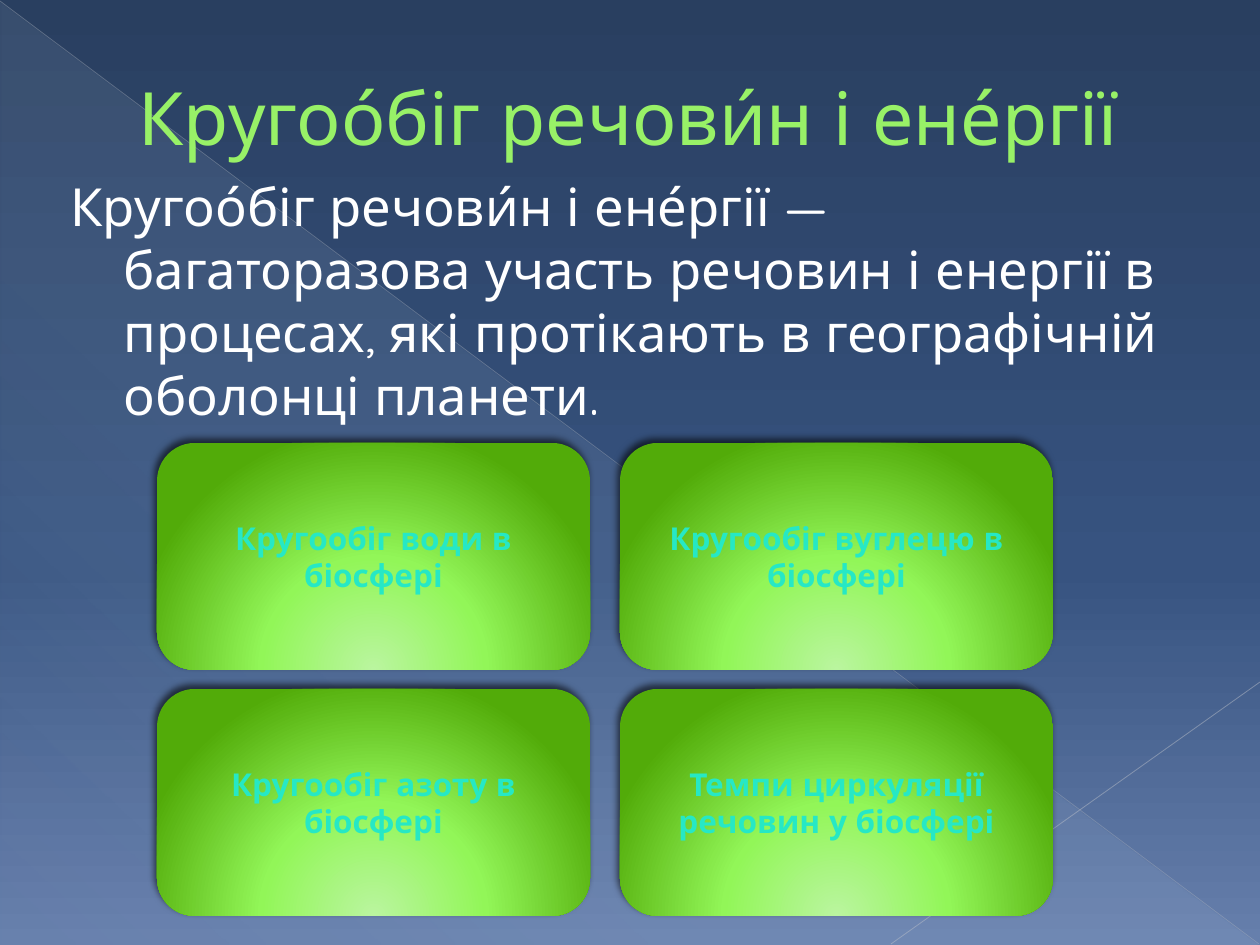
from lxml import etree
from pptx import Presentation
from pptx.dml.color import RGBColor
from pptx.enum.shapes import MSO_CONNECTOR, MSO_SHAPE
from pptx.enum.text import MSO_ANCHOR, PP_ALIGN
from pptx.oxml.ns import qn
from pptx.util import Emu, Pt

STRAIGHT = MSO_CONNECTOR.STRAIGHT
TRIANGLE, ROUNDED = MSO_SHAPE.RIGHT_TRIANGLE, MSO_SHAPE.ROUNDED_RECTANGLE
TOP, MIDDLE = MSO_ANCHOR.TOP, MSO_ANCHOR.MIDDLE
CENTER = PP_ALIGN.CENTER

FONT = "Quicksand"
WHITE = RGBColor(0xFF, 0xFF, 0xFF)
BLACK = RGBColor(0, 0, 0)
LIME = RGBColor(0x98, 0xF1, 0x67)
LIME_EDGE = RGBColor(0x58, 0x91, 0x29)
ICE = RGBColor(0xD6, 0xEC, 0xFF)
SILVER = RGBColor(0xB7, 0xBC, 0xC5)
PALE_SILVER = RGBColor(0xBF, 0xC3, 0xCB)

SKY = [(0, RGBColor(0x29, 0x3F, 0x60), 100), (60, RGBColor(0x37, 0x53, 0x80), 100),
       (100, RGBColor(0x66, 0x7F, 0xAC), 100)]
SHEEN = [(0, ICE, 10), (70, ICE, 8), (100, ICE, 1)]
GREEN_GLOW = [(0, RGBColor(0xBA, 0xF5, 0x9F), 100), (46, RGBColor(0x92, 0xF6, 0x58), 100),
              (100, RGBColor(0x52, 0xAB, 0x09), 100)]
TURQUOISE = [(0, RGBColor(0x00, 0x66, 0x59), 100), (78, RGBColor(0x26, 0xE8, 0xC5), 100),
             (100, RGBColor(0xED, 0xFC, 0xF8), 100)]
GLOW_CENTER = {"l": 50, "t": 155, "r": 50, "b": -55}

TITLE = "Кругоо́біг речови́н і ене́ргії"
DEFINITION = ("Кругоо́біг речови́н і ене́ргії — багаторазова участь речовин і енергії в "
              "процесах, які протікають в географічній оболонці планети.")
TOPICS = [
    ["Кругообіг води в біосфері", "Кругообіг вуглецю в біосфері"],
    ["Кругообіг азоту в біосфері", "Темпи циркуляції речовин у біосфері"],
]
RAYS = [
    ((0, 1), (1259, 944), SILVER, 0.39, 35),
    ((1260, 682), (891, 944), PALE_SILVER, 0.47, 45),
]
CARD_LEFT, CARD_TOP, CARD_WIDTH, CARD_HEIGHT = 157, 443, 433, 227
COLUMN_GAP, ROW_GAP = 30, 19


def px(length):
    return Emu(round(length * 914400 / 126))


def child(parent, tag, **attributes):
    return etree.SubElement(parent, qn(tag), {k: str(v) for k, v in attributes.items()})


def add_color(parent, color, opacity=100):
    swatch = child(parent, "a:srgbClr", val=color)
    if opacity < 100:
        child(swatch, "a:alpha", val=opacity * 1000)


def set_gradient(fill, owner, stops, angle=None, center=None):
    fill.gradient()
    gradient = owner.find(".//" + qn("a:gradFill"))
    for part in list(gradient):
        gradient.remove(part)
    stop_list = child(gradient, "a:gsLst")
    for position, color, opacity in stops:
        add_color(child(stop_list, "a:gs", pos=position * 1000), color, opacity)
    if center:
        path = child(gradient, "a:path", path="circle")
        child(path, "a:fillToRect", **{side: share * 1000 for side, share in center.items()})
    else:
        child(gradient, "a:lin", ang=angle * 60000, scaled=0)


def add_panel(slide, preset, box, stops, **direction):
    panel = slide.shapes.add_shape(preset, *map(px, box))
    panel.shadow.inherit = False
    panel.line.fill.background()
    set_gradient(panel.fill, panel._element.spPr, stops, **direction)
    return panel


def add_ray(slide, start, end, color, width, opacity):
    ray = slide.shapes.add_connector(STRAIGHT, *map(px, start + end))
    ray.line.color.rgb = color
    ray.line.width = Pt(width)
    properties = ray._element.spPr
    child(properties.find(".//" + qn("a:srgbClr")), "a:alpha", val=opacity * 1000)
    child(properties, "a:effectLst")


def write(frame, text, size, anchor):
    frame.word_wrap = True
    frame.vertical_anchor = anchor
    frame.text = text
    paragraph = frame.paragraphs[0]
    run = paragraph.runs[0]
    run.font.name = FONT
    run.font.size = Pt(size)
    return paragraph, run


def add_text(slide, box, text, size, color, anchor, margin, indent):
    frame = slide.shapes.add_textbox(*map(px, box)).text_frame
    paragraph, run = write(frame, text, size, anchor)
    run.font.color.rgb = color
    properties = paragraph._p.get_or_add_pPr()
    properties.set("marL", str(px(margin)))
    properties.set("indent", str(px(indent)))
    return run


def add_card(slide, row, column, topic):
    left = CARD_LEFT + column * (CARD_WIDTH + COLUMN_GAP)
    top = CARD_TOP + row * (CARD_HEIGHT + ROW_GAP)
    card = add_panel(slide, ROUNDED, (left, top, CARD_WIDTH, CARD_HEIGHT),
                     GREEN_GLOW, center=GLOW_CENTER)
    effects = card._element.spPr.find(qn("a:effectLst"))
    shadow = child(effects, "a:outerShdw", blurRad=Pt(4), dist=Pt(3),
                   dir=245 * 60000, rotWithShape=0)
    add_color(shadow, BLACK, 60)
    paragraph, run = write(card.text_frame, topic, 18, MIDDLE)
    paragraph.alignment = CENTER
    run.font.bold = True
    set_gradient(run.font.fill, run._r, TURQUOISE, angle=90)


def main():
    deck = Presentation()
    deck.slide_width, deck.slide_height = px(1260), px(945)
    slide = deck.slides.add_slide(deck.slide_layouts[6])
    set_gradient(slide.background.fill, slide._element, SKY, angle=90)

    add_panel(slide, TRIANGLE, (1, 2, 1258, 943), SHEEN, angle=133)
    for ray in RAYS:
        add_ray(slide, *ray)

    title = add_text(slide, (59, 20, 1134, 193), TITLE, 42, LIME, MIDDLE, 67, 0)
    outline = etree.Element(qn("a:ln"), w=str(Pt(0.5)))
    add_color(child(outline, "a:solidFill"), LIME_EDGE)
    title._r.get_or_add_rPr().insert(0, outline)
    add_text(slide, (49, 168, 1134, 325), DEFINITION, 30, WHITE, TOP, 62, -53)

    for row, topics in enumerate(TOPICS):
        for column, topic in enumerate(topics):
            add_card(slide, row, column, topic)

    deck.save("out.pptx")


if __name__ == "__main__":
    main()
